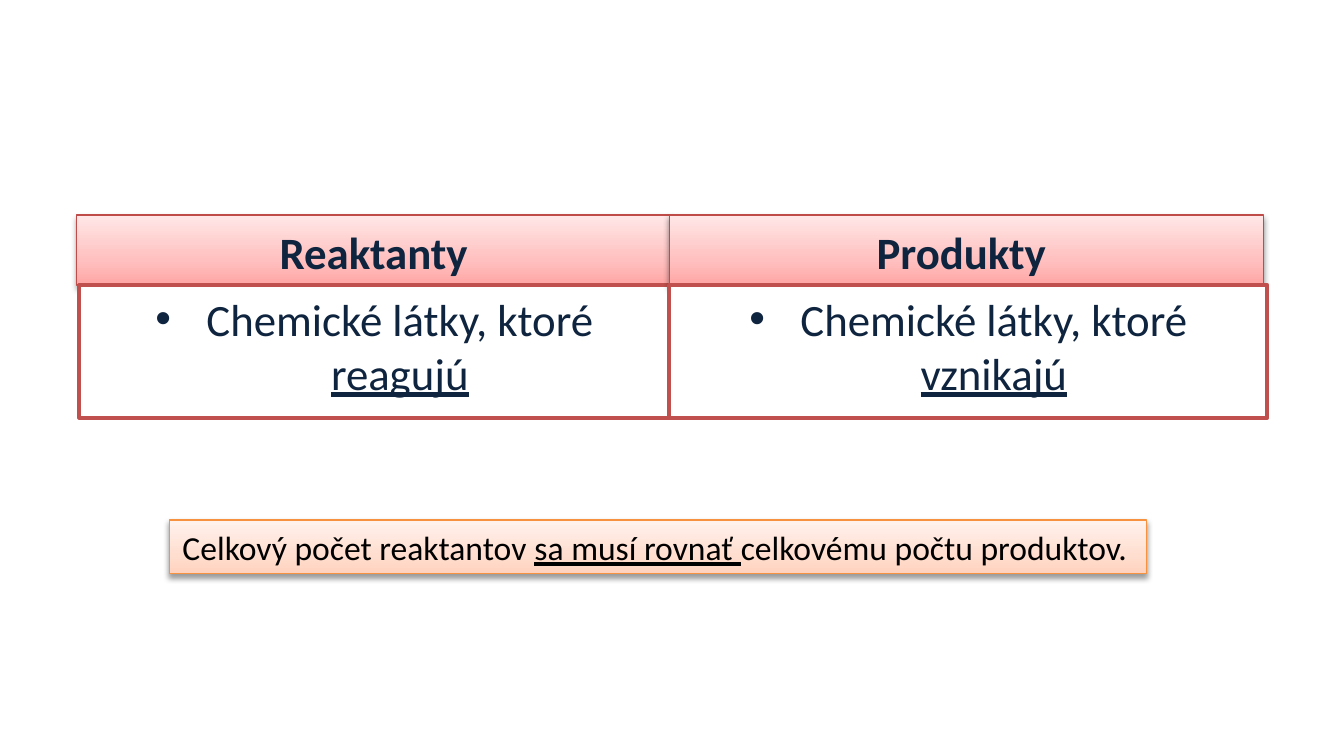
from lxml.etree import SubElement
from pptx import Presentation
from pptx.dml.color import RGBColor
from pptx.enum.shapes import MSO_SHAPE
from pptx.enum.text import MSO_ANCHOR, MSO_AUTO_SIZE, PP_ALIGN
from pptx.oxml import parse_xml
from pptx.oxml.ns import nsdecls, qn
from pptx.util import Inches, Pt

NAVY = RGBColor(0x0F, 0x24, 0x3E)
BLACK = RGBColor(0, 0, 0)
WHITE = RGBColor(0xFF, 0xFF, 0xFF)
RED = RGBColor(0xC0, 0x50, 0x4D)
DARK_RED = RGBColor(0xBF, 0x4C, 0x48)
ORANGE = RGBColor(0xF6, 0x92, 0x40)
PINKS = (RGBColor(0xFF, 0xA6, 0xA5), RGBColor(0xFF, 0xC0, 0xBF), RGBColor(0xFF, 0xE7, 0xE7))
PEACHES = (RGBColor(0xFF, 0xD2, 0xBD), RGBColor(0xFF, 0xDE, 0xD0), RGBColor(0xFF, 0xF2, 0xED))


def add_box(slide, box, line_color, line_width):
    """Add an outlined rectangle without a shadow."""
    sp = slide.shapes.add_shape(MSO_SHAPE.RECTANGLE, *map(Inches, box))
    sp.shadow.inherit = False
    sp.line.color.rgb = line_color
    sp.line.width = Pt(line_width)
    sp.text_frame.word_wrap = True
    return sp


def add_glow_box(slide, box, colors, line_color):
    """Add a rectangle with an upward gradient and a soft shadow."""
    sp = add_box(slide, box, line_color, 0.75)
    stops = "".join(
        f'<a:gs pos="{pos}"><a:srgbClr val="{color}"/></a:gs>'
        for pos, color in zip((0, 35000, 100000), colors))
    gradient = parse_xml(
        f'<a:gradFill {nsdecls("a")} rotWithShape="1"><a:gsLst>{stops}</a:gsLst>'
        '<a:lin ang="16200000" scaled="1"/></a:gradFill>')
    props = sp.element.spPr
    props.find(qn("a:prstGeom")).addnext(gradient)
    props.find(qn("a:effectLst")).append(parse_xml(
        f'<a:outerShdw {nsdecls("a")} blurRad="40000" dist="20000" dir="5400000" '
        'rotWithShape="0"><a:srgbClr val="000000"><a:alpha val="38000"/>'
        '</a:srgbClr></a:outerShdw>'))
    return sp


def add_runs(p, runs, size, color, bold=False):
    """Fill a paragraph with (text, underlined) runs."""
    for text, underlined in runs:
        r = p.add_run()
        r.text = text
        r.font.name = "Calibri"
        r.font.size = Pt(size)
        r.font.color.rgb = color
        r.font.bold = bold
        r.font.underline = underlined


def add_heading(slide, box, text):
    """Add a column heading."""
    sp = add_glow_box(slide, box, PINKS, DARK_RED)
    tf = sp.text_frame
    tf.vertical_anchor = MSO_ANCHOR.BOTTOM
    p = tf.paragraphs[0]
    p.alignment = PP_ALIGN.CENTER
    add_runs(p, [(text, False)], 24, NAVY, bold=True)


def add_definition(slide, box, runs):
    """Add a white box with one centred bullet."""
    sp = add_box(slide, box, RED, 2)
    sp.fill.solid()
    sp.fill.fore_color.rgb = WHITE
    tf = sp.text_frame
    tf.vertical_anchor = MSO_ANCHOR.TOP
    p = tf.paragraphs[0]
    p.alignment = PP_ALIGN.CENTER
    props = p._p.get_or_add_pPr()
    props.set("marL", str(Inches(0.38)))
    props.set("indent", str(-Inches(0.38)))
    SubElement(props, qn("a:buFont"), typeface="Arial")
    SubElement(props, qn("a:buChar"), char="•")
    add_runs(p, runs, 24, NAVY)


def add_rule(slide, box, runs):
    """Add the one-line rule below the columns."""
    sp = add_glow_box(slide, box, PEACHES, ORANGE)
    tf = sp.text_frame
    tf.word_wrap = False
    tf.auto_size = MSO_AUTO_SIZE.SHAPE_TO_FIT_TEXT
    tf.vertical_anchor = MSO_ANCHOR.TOP
    p = tf.paragraphs[0]
    p.alignment = PP_ALIGN.LEFT
    add_runs(p, runs, 18, BLACK)


def main():
    """Build the slide and save it."""
    prs = Presentation()
    prs.slide_width = Inches(10)
    prs.slide_height = prs.slide_width * 9 // 16
    slide = prs.slides.add_slide(prs.slide_layouts[6])
    columns = [
        ("Reaktanty", 0.57, 0.59, 4.39, "reagujú"),
        ("Produkty ", 4.98, 4.98, 4.45, "vznikajú"),
    ]
    for heading, heading_left, left, width, verb in columns:
        add_heading(slide, (heading_left, 1.6, 4.42, 0.52), heading)
        add_definition(slide, (left, 2.12, width, 0.99),
                       [("Chemické látky, ktoré ", False), (verb, True)])
    add_rule(slide, (1.26, 3.87, 7.27, 0.4), [
        ("Celkový počet reaktantov ", False),
        ("sa musí rovnať ", True),
        ("celkovému počtu produktov.", False),
    ])
    prs.save("out.pptx")


if __name__ == "__main__":
    main()
